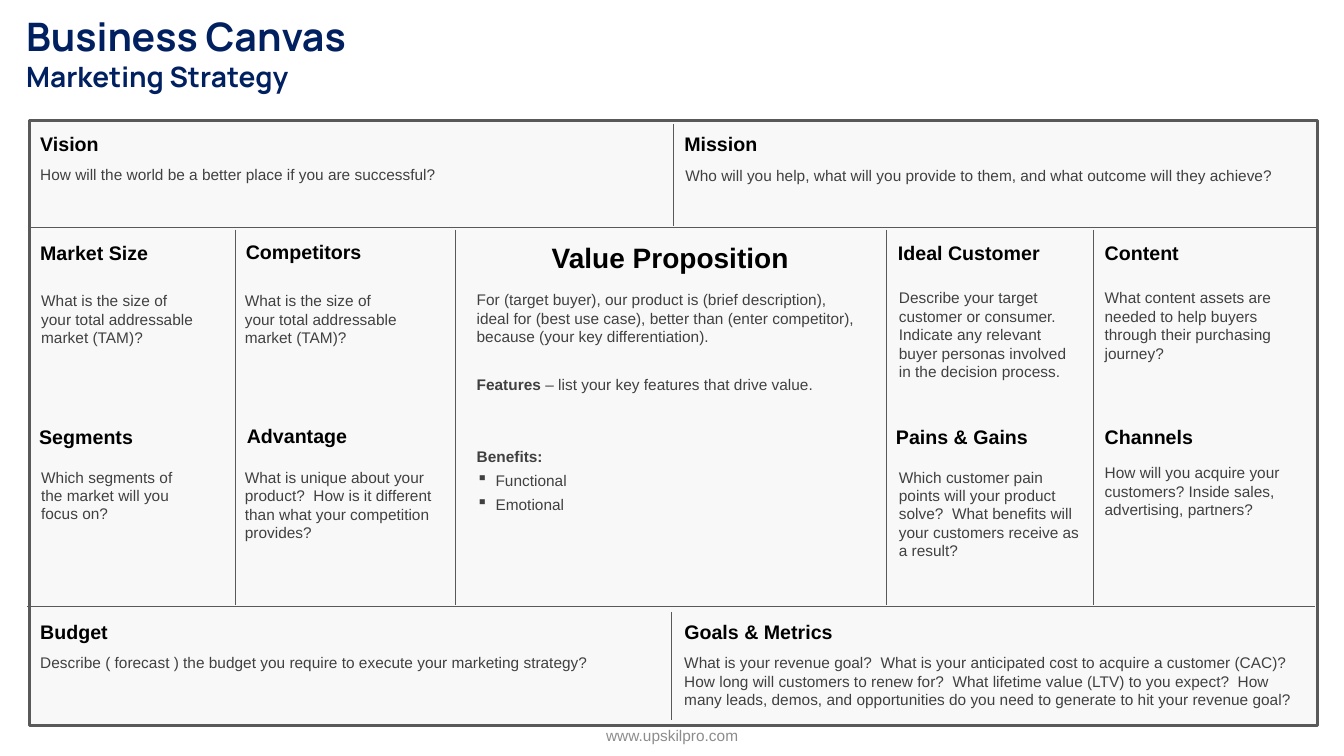
"""Builds a one-page marketing strategy business canvas."""
import pptx
import pptx.dml.color
import pptx.enum.shapes
import pptx.enum.text
import pptx.oxml
import pptx.oxml.ns
import pptx.util

Pt = pptx.util.Pt
RGBColor = pptx.dml.color.RGBColor
ALIGN = pptx.enum.text.PP_ALIGN
ANCHOR = pptx.enum.text.MSO_ANCHOR

NAVY = RGBColor(0x00, 0x20, 0x60)
BLACK = RGBColor(0x00, 0x00, 0x00)
CHARCOAL = RGBColor(0x40, 0x40, 0x40)
RULE_GRAY = RGBColor(0x59, 0x59, 0x59)
FOOTER_GRAY = RGBColor(0x8C, 0x8C, 0x8C)
PANEL = RGBColor(0xF8, 0xF8, 0xF8)

TITLE = {"name": "Manrope", "size": Pt(28), "bold": True}
SUBTITLE = {**TITLE, "size": Pt(20)}
HEADING = {"name": "Arial", "size": Pt(14), "bold": True}
CENTRAL_HEADING = {**HEADING, "size": Pt(20)}
BODY = {"name": "Arial", "size": Pt(11), "bold": False}
STRONG = {**BODY, "bold": True}

HEADING_WIDTH = 146
HEADING_HEIGHT = 24.5
LINE_HEIGHT = 13.3

# heading, (left, top), question, (left, top, width), lines
SECTIONS = [
    ("Vision", (21.6, 90.7),
     "How will the world be a better place if you are successful?", (21.6, 114.5, 310), 1),
    ("Mission", (481.7, 90.7),
     "Who will you help, what will you provide to them, and what outcome will they achieve?",
     (482.4, 115.2, 445), 1),
    ("Market Size", (21.6, 168.5),
     "What is the size of your total addressable market (TAM)?", (22.3, 204.5, 126), 3),
    ("Competitors", (168.5, 167.8),
     "What is the size of your total addressable market (TAM)?", (167.8, 204.5, 126), 3),
    ("Ideal Customer", (634.3, 168.5),
     "Describe your target customer or consumer.  Indicate any relevant buyer personas "
     "involved in the decision process.", (635, 202.3, 144.7), 5),
    ("Content", (782, 168.5),
     "What content assets are needed to help buyers through their purchasing journey?",
     (782, 202.3, 156.2), 4),
    ("Segments", (20.9, 300.2),
     "Which segments of the market will you focus on?", (22.3, 330.5, 126), 3),
    ("Advantage", (169.2, 299.5),
     "What is unique about your product?  How is it different than what your "
     "competition provides?", (167.8, 330.5, 152.6), 4),
    ("Pains & Gains", (632.9, 300.2),
     "Which customer pain points will your product solve?  What benefits will your "
     "customers receive as a result?", (635, 330.5, 146.9), 5),
    ("Channels", (782, 300.2),
     "How will you acquire your customers? Inside sales, advertising, partners?",
     (782, 327.6, 156.2), 3),
    ("Budget", (21.6, 439.2),
     "Describe ( forecast ) the budget you require to execute your marketing strategy?",
     (21.6, 463, 415), 1),
    ("Goals & Metrics", (481.7, 439.2),
     "What is your revenue goal?  What is your anticipated cost to acquire a customer (CAC)? "
     "How long will customers to renew for?  What lifetime value (LTV) to you expect?  How "
     "many leads, demos, and opportunities do you need to generate to hit your revenue goal?",
     (481.7, 463, 449.3), 3),
]

# space before, bulleted, runs
VALUE_PROPOSITION = [
    (0, False, [("For (target buyer), our product is (brief description), ideal for (best use "
                 "case), better than (enter competitor), because (your key differentiation).",
                 BODY)]),
    (21, False, [("Features ", STRONG), ("– list your key features that drive value.", BODY)]),
    (38, False, [("Benefits:", STRONG)]),
    (4, True, [("Functional", BODY)]),
    (4, True, [("Emotional", BODY)]),
]

ROW_RULES = [(20.2, 162.7), (19.4, 433.4)]
COLUMN_RULES = [(481, 88.6, 161.3), (479.5, 437, 514.1)] + [
    (x, 164.2, 432) for x in (167.8, 325.4, 632.9, 781.2)]


def add_run(paragraph, wording, style, color):
    """Append a formatted run to a paragraph."""
    run = paragraph.add_run()
    run.text = wording
    for attribute, value in style.items():
        setattr(run.font, attribute, value)
    run.font.color.rgb = color


def add_box(slide, left, top, width, height):
    """Add a wrapping text box and return its text frame."""
    frame = slide.shapes.add_textbox(Pt(left), Pt(top), Pt(width), Pt(height)).text_frame
    frame.word_wrap = True
    return frame


def add_label(slide, box, wording, style, color, align=ALIGN.LEFT):
    """Add a text box with a single paragraph."""
    frame = add_box(slide, *box)
    frame.paragraphs[0].alignment = align
    add_run(frame.paragraphs[0], wording, style, color)
    return frame


def add_rule(slide, x1, y1, x2, y2):
    """Add a thin dividing line."""
    rule = slide.shapes.add_connector(
        pptx.enum.shapes.MSO_CONNECTOR.STRAIGHT, Pt(x1), Pt(y1), Pt(x2), Pt(y2))
    rule.line.color.rgb = RULE_GRAY
    rule.line.width = Pt(0.5)
    properties = rule._element.spPr
    properties.append(pptx.oxml.parse_xml(
        f"<a:effectLst {pptx.oxml.ns.nsdecls('a')}/>"))


def add_bullet(paragraph):
    """Give a paragraph a hanging square bullet."""
    properties = paragraph._p.get_or_add_pPr()
    properties.set("marL", str(Pt(13.5)))
    properties.set("indent", str(-Pt(13.5)))
    properties.append(pptx.oxml.parse_xml(
        f"<a:buChar {pptx.oxml.ns.nsdecls('a')} char='▪'/>"))


def fill_title(slide):
    """Place the title placeholder and write both of its lines."""
    title = slide.shapes.title
    place = {"left": 11.5, "top": 5, "width": 776, "height": 65.5}
    for attribute, value in place.items():
        setattr(title, attribute, Pt(value))
    frame = title.text_frame
    frame.vertical_anchor = ANCHOR.TOP
    frame.auto_size = pptx.enum.text.MSO_AUTO_SIZE.NONE
    for paragraph, wording, style in (
            (frame.paragraphs[0], "Business Canvas", TITLE),
            (frame.add_paragraph(), "Marketing Strategy", SUBTITLE)):
        paragraph.alignment = ALIGN.LEFT
        add_run(paragraph, wording, style, NAVY)


def add_panel(slide):
    """Add the framed background of the canvas."""
    panel = slide.shapes.add_shape(
        pptx.enum.shapes.MSO_SHAPE.RECTANGLE, Pt(20.9), Pt(85.9), Pt(920.2), Pt(432.5))
    panel.shadow.inherit = False
    panel.fill.solid()
    panel.fill.fore_color.rgb = PANEL
    panel.line.color.rgb = RULE_GRAY
    panel.line.width = Pt(2)


def add_value_proposition(slide):
    """Add the central section with its features and benefits."""
    add_label(slide, (325.4, 168.5, 306.7, 31.7), "Value Proposition",
              CENTRAL_HEADING, BLACK, ALIGN.CENTER)
    frame = add_box(slide, 333.4, 203.8, 288, 191.5)
    for index, (space, bulleted, runs) in enumerate(VALUE_PROPOSITION):
        paragraph = frame.add_paragraph() if index else frame.paragraphs[0]
        if index:
            paragraph.space_before = Pt(space)
        if bulleted:
            add_bullet(paragraph)
        for wording, style in runs:
            add_run(paragraph, wording, style, CHARCOAL)


def main():
    """Build and save the canvas."""
    deck = pptx.Presentation()
    deck.slide_width, deck.slide_height = Pt(960), Pt(540)
    slide = deck.slides.add_slide(deck.slide_layouts.get_by_name("Title Only"))
    fill_title(slide)
    add_panel(slide)
    for left, y in ROW_RULES:
        add_rule(slide, left, y, left + 920.2, y)
    for x, top, bottom in COLUMN_RULES:
        add_rule(slide, x, top, x, bottom)
    for heading, heading_at, question, question_at, lines in SECTIONS:
        add_label(slide, (*heading_at, HEADING_WIDTH, HEADING_HEIGHT), heading, HEADING, BLACK)
        add_label(slide, (*question_at, lines * LINE_HEIGHT + 7.2), question, BODY, CHARCOAL)
    add_value_proposition(slide)
    footer = add_label(slide, (318.2, 511.2, 324, 28.8), "www.upskilpro.com",
                       BODY, FOOTER_GRAY, ALIGN.CENTER)
    footer.vertical_anchor = ANCHOR.MIDDLE
    deck.save("out.pptx")


if __name__ == "__main__":
    main()
